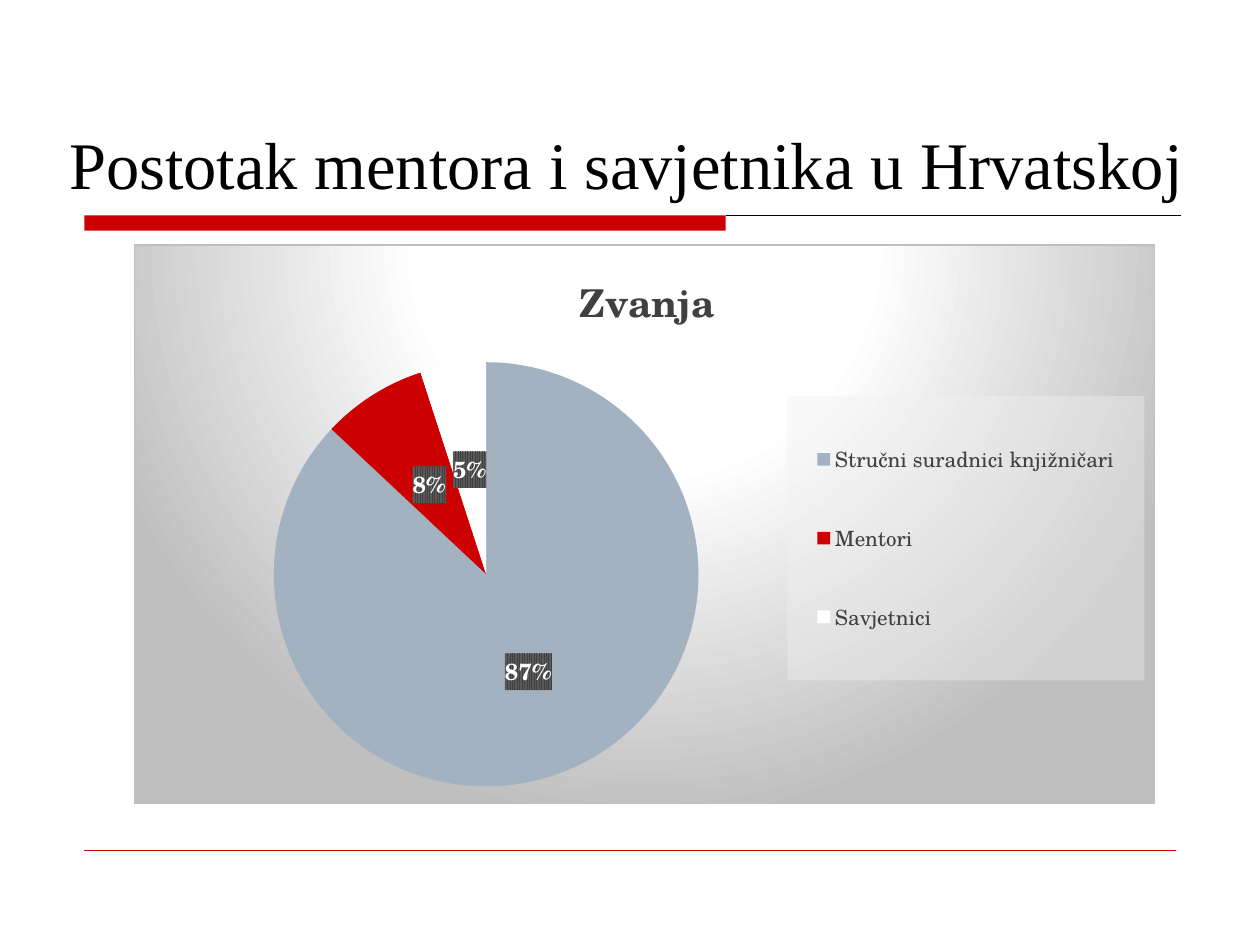
"""Build a slide with a pie chart of librarians' professional titles."""
from dataclasses import dataclass

from lxml import etree
from pptx import Presentation
from pptx import util as u
from pptx.chart.data import CategoryChartData
from pptx.dml.color import RGBColor
from pptx.enum import chart as ch
from pptx.enum import shapes, text
from pptx.oxml import parse_xml
from pptx.oxml.ns import nsdecls, qn


@dataclass(frozen=True)
class Theme:
    heading_font: str = "Times New Roman"
    chart_font: str = "TeX Gyre Schola"
    red: str = "CC0000"
    black: str = "000000"
    white: str = "FFFFFF"
    blue_grey: str = "A3B2C1"
    dark: str = "404040"
    stripe: str = "595959"
    pale: str = "F2F2F2"
    silver: str = "BFBFBF"
    heading_size: float = 38
    chart_title_size: float = 22
    label_size: float = 13.3
    legend_size: float = 12
    chart_size: float = 10


@dataclass(frozen=True)
class Rule:
    left: float
    right: float
    top: float
    color: str
    weight: float


@dataclass(frozen=True)
class Rank:
    name: str
    share: int
    color: str


THEME = Theme()
RULES = (
    Rule(5.76, 9.37, 1.71, THEME.black, 0.75),
    Rule(0.67, 9.33, 6.75, THEME.red, 0.25),
)
RANKS = (
    Rank("Stručni suradnici knjižničari", 87, THEME.blue_grey),
    Rank("Mentori", 8, THEME.red),
    Rank("Savjetnici", 5, THEME.white),
)


def style(font, name: str, size: float, color: str, bold: bool = False) -> None:
    font.name, font.size, font.bold = name, u.Pt(size), bold
    font.color.rgb = RGBColor.from_string(color)


def solid(shape, color: str) -> None:
    shape.fill.solid()
    shape.fill.fore_color.rgb = RGBColor.from_string(color)


def color_xml(color: str, inner: str = "") -> str:
    return f'<a:srgbClr val="{color}">{inner}</a:srgbClr>'


def chart_fill(content: str):
    return parse_xml(f'<c:spPr {nsdecls("c", "a")}>{content}</c:spPr>')


def place(part, index: int, inner: bool = False, **fractions: float) -> None:
    for old in part.findall(qn("c:layout")):
        part.remove(old)
    target = '<c:layoutTarget val="inner"/>' if inner else ""
    modes = "".join(f'<c:{key}Mode val="edge"/>' for key in "xy")
    sizes = "".join(f'<c:{key} val="{value}"/>' for key, value in fractions.items())
    part.insert(index, parse_xml(
        f'<c:layout {nsdecls("c")}><c:manualLayout>{target}{modes}{sizes}'
        "</c:manualLayout></c:layout>"))


def draw_rule(slide, rule: Rule) -> None:
    line = slide.shapes.add_connector(
        shapes.MSO_CONNECTOR.STRAIGHT, u.Inches(rule.left), u.Inches(rule.top),
        u.Inches(rule.right), u.Inches(rule.top))
    line.line.color.rgb = RGBColor.from_string(rule.color)
    line.line.width = u.Pt(rule.weight)
    etree.SubElement(line.element.spPr, qn("a:effectLst"))


def draw_bar(slide) -> None:
    bar = slide.shapes.add_shape(
        shapes.MSO_SHAPE.RECTANGLE, u.Inches(0.67), u.Inches(1.71),
        u.Inches(5.09), u.Inches(0.12))
    bar.shadow.inherit = False
    solid(bar, THEME.red)
    bar.line.fill.background()


def draw_heading(slide, wording: str) -> None:
    frame = slide.shapes.add_textbox(
        u.Inches(0.45), u.Inches(0.33), u.Inches(9.1), u.Inches(1.33)).text_frame
    frame.word_wrap = True
    frame.vertical_anchor = text.MSO_ANCHOR.BOTTOM
    frame.text = wording
    style(frame.paragraphs[0].font, THEME.heading_font, THEME.heading_size, THEME.black)


def draw_pie(slide, name: str, ranks: tuple[Rank, ...]) -> None:
    shares = CategoryChartData()
    shares.categories = [rank.name for rank in ranks]
    shares.add_series(name, [rank.share for rank in ranks])
    chart = slide.shapes.add_chart(
        ch.XL_CHART_TYPE.PIE, u.Inches(1.06), u.Inches(1.94),
        u.Inches(8.11), u.Inches(4.44), shares).chart
    style(chart.font, "Arial", THEME.chart_size, THEME.black)

    chart.has_title = True
    heading = chart.chart_title.text_frame
    heading.text = name
    style(heading.paragraphs[0].font, THEME.chart_font, THEME.chart_title_size,
          THEME.dark, True)

    chart.has_legend = True
    chart.legend.position = ch.XL_LEGEND_POSITION.RIGHT
    chart.legend.include_in_layout = False
    style(chart.legend.font, THEME.chart_font, THEME.legend_size, THEME.dark)

    plot = chart.plots[0]
    plot.vary_by_categories = True
    for index, rank in enumerate(ranks):
        solid(plot.series[0].points[index].format, rank.color)
    labels = plot.series[0].data_labels
    labels.show_percentage, labels.show_value = True, False
    labels.number_format, labels.number_format_is_linked = "0%", False
    labels.position = ch.XL_LABEL_POSITION.CENTER
    style(labels.font, THEME.chart_font, THEME.label_size, THEME.white, True)

    space = chart.element
    title, plot_area, legend, label_set = (
        space.xpath(f".//c:{tag}")[0]
        for tag in ("title", "plotArea", "legend", "ser/c:dLbls"))
    place(title, 1, x=0.43, y=0.03)
    place(plot_area, 0, inner=True, x=0.13, y=0.21, w=0.43, h=0.76)
    place(legend, 1, x=0.64, y=0.27, w=0.35, h=0.51)

    faded = color_xml(THEME.pale, '<a:alpha val="39000"/>')
    legend.find(qn("c:txPr")).addprevious(
        chart_fill(f"<a:solidFill>{faded}</a:solidFill>"))
    label_set.find(qn("c:txPr")).addprevious(chart_fill(
        f'<a:pattFill prst="ltVert"><a:fgClr>{color_xml(THEME.dark)}</a:fgClr>'
        f"<a:bgClr>{color_xml(THEME.stripe)}</a:bgClr></a:pattFill>"))
    stops = "".join(
        f'<a:gs pos="{percent * 1000}">{color_xml(color)}</a:gs>'
        for percent, color in ((0, THEME.white), (39, THEME.white), (100, THEME.silver)))
    space.find(qn("c:chart")).addnext(chart_fill(
        f'<a:gradFill><a:gsLst>{stops}</a:gsLst><a:path path="circle">'
        '<a:fillToRect l="50000" t="-80000" r="50000" b="180000"/></a:path></a:gradFill>'
        f'<a:ln w="{u.Pt(0.75)}"><a:solidFill>{color_xml(THEME.silver)}</a:solidFill></a:ln>'))


def main() -> None:
    deck = Presentation()
    deck.slide_width, deck.slide_height = u.Inches(10), u.Inches(7.5)
    slide = deck.slides.add_slide(deck.slide_layouts[6])
    draw_bar(slide)
    for rule in RULES:
        draw_rule(slide, rule)
    draw_pie(slide, "Zvanja", RANKS)
    draw_heading(slide, "Postotak mentora i savjetnika u Hrvatskoj")
    deck.save("out.pptx")


if __name__ == "__main__":
    main()
